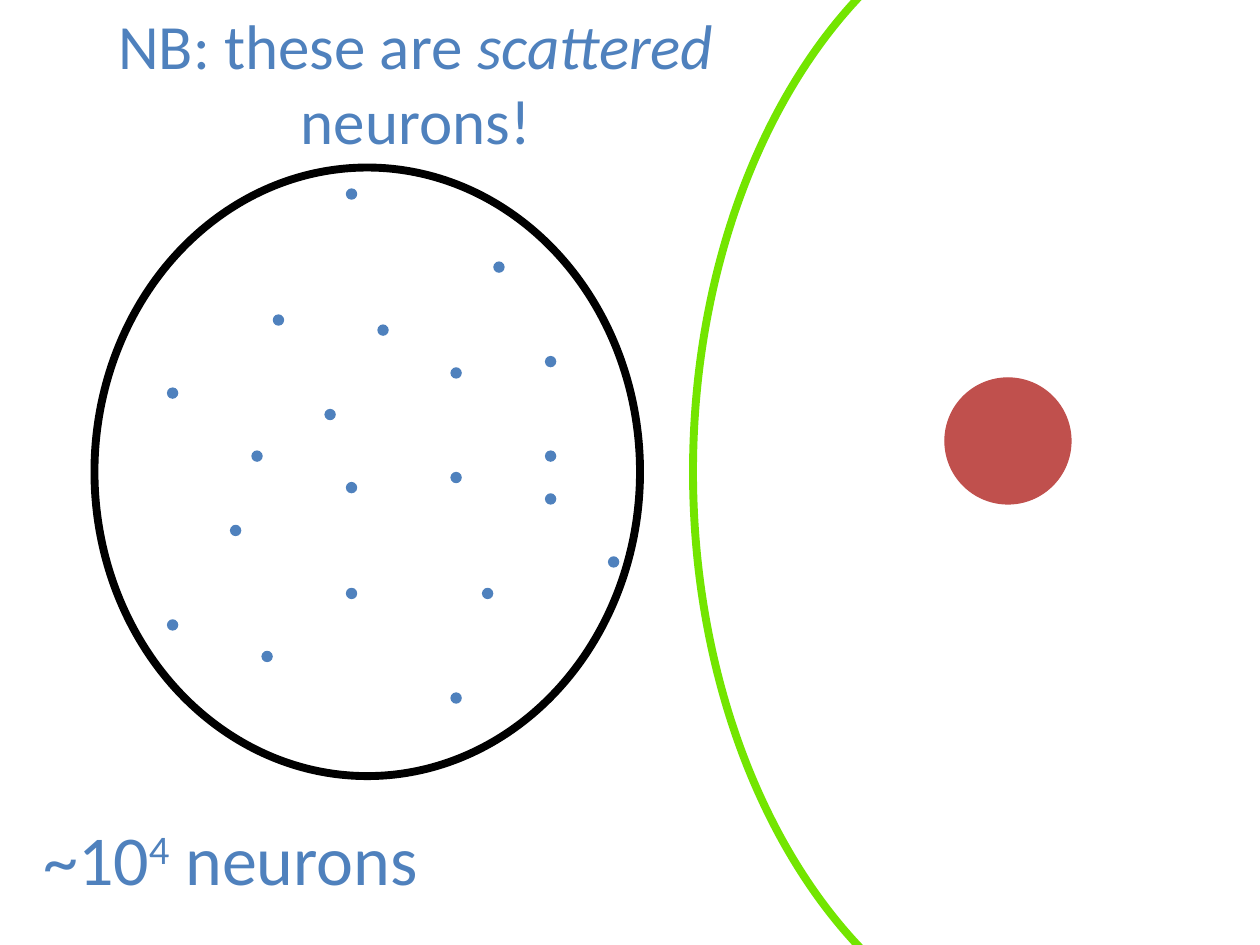
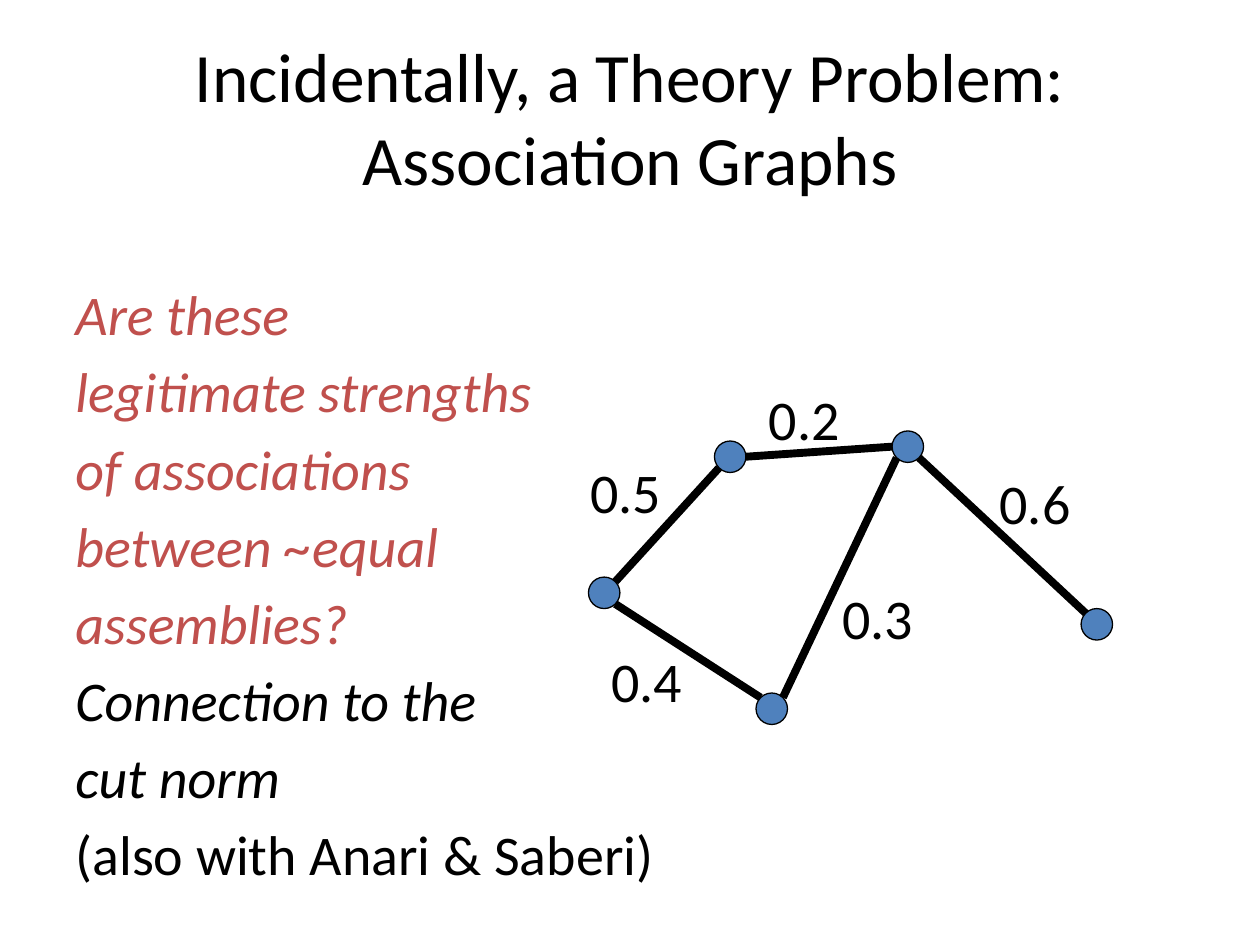
from math import cos, radians, sin

from lxml.etree import SubElement
from pptx import Presentation
from pptx.dml.color import RGBColor
from pptx.enum.shapes import MSO_CONNECTOR as Connector, MSO_SHAPE as Shape
from pptx.enum.text import MSO_ANCHOR as Anchor, MSO_AUTO_SIZE as AutoSize, PP_ALIGN as Align
from pptx.oxml.ns import qn
from pptx.util import Inches, Pt

BLACK, BLUE, RED, GREEN = "000000", "4F81BD", "C0504D", "73E500"
FONT = "Calibri"
THICK, THIN = 4.5, 0.75
DOT, NODE = 0.08, 0.25


def color(hex_string):
    """Turn a hex string into a colour."""
    return RGBColor.from_string(hex_string)


class Deck:
    """Hold the style, the presentation and the current slide."""

    def __init__(self):
        """Start an empty 10 by 7.5 inch presentation."""
        self.prs = Presentation()
        self.prs.slide_width, self.prs.slide_height = Inches(10), Inches(7.5)

    def new_slide(self):
        """Add a blank slide and make it current."""
        self.slide = self.prs.slides.add_slide(self.prs.slide_layouts[6])

    def ellipse(self, left, top, width, height, line, fill=None, weight=THIN):
        """Draw an ellipse, hollow unless a fill is given."""
        oval = self.slide.shapes.add_shape(
            Shape.OVAL, Inches(left), Inches(top), Inches(width), Inches(height))
        oval.shadow.inherit = False
        oval.line.color.rgb = color(line)
        oval.line.width = Pt(weight)
        if fill:
            oval.fill.solid()
            oval.fill.fore_color.rgb = color(fill)
        else:
            oval.fill.background()

    def edge(self, start, end):
        """Draw a thick straight line between two points."""
        line = self.slide.shapes.add_connector(
            Connector.STRAIGHT, *(Inches(value) for value in (*start, *end)))
        line.line.color.rgb = color(BLACK)
        line.line.width = Pt(THICK)
        SubElement(line._element.spPr, qn("a:effectLst"))

    def text_box(self, left, top, width, height, wrap=False):
        """Add an empty text frame that grows with its text unless it wraps."""
        frame = self.slide.shapes.add_textbox(
            Inches(left), Inches(top), Inches(width), Inches(height)).text_frame
        frame.word_wrap = wrap
        frame.auto_size = AutoSize.NONE if wrap else AutoSize.SHAPE_TO_FIT_TEXT
        return frame

    def paragraph(self, frame, text, size, ink=BLACK, align=Align.CENTER, italic=False):
        """Write text as the next paragraph of a frame."""
        last = frame.paragraphs[-1]
        para = frame.add_paragraph() if last.runs else last
        para.text = text
        para.alignment = align
        para.font.name, para.font.size = FONT, Pt(size)
        para.font.color.rgb = color(ink)
        para.font.italic = italic
        for run in para.runs:
            self.style_run(run, size, ink, italic)
        return para

    def style_run(self, run, size, ink, italic=False):
        """Give a run the deck font."""
        run.font.name, run.font.size = FONT, Pt(size)
        run.font.color.rgb = color(ink)
        run.font.italic = italic

    def add_run(self, para, text, size, ink, italic=False, baseline=0):
        """Append a run, raised by a baseline percentage if given."""
        run = para.add_run()
        run.text = text
        self.style_run(run, size, ink, italic)
        if baseline:
            run._r.get_or_add_rPr().set("baseline", str(baseline * 1000))


NEURONS = [
    (3, 2.58), (3.92, 2.08), (2.58, 3.25), (2.75, 4.67), (2.17, 2.5),
    (1.83, 4.17), (3.58, 5.5), (2.08, 5.17), (3.83, 4.67), (3.58, 2.92),
    (4.33, 3.58), (4.83, 4.42), (2.75, 3.83), (2.75, 1.5), (3.58, 3.75),
    (1.33, 3.08), (4.33, 2.83), (2, 3.58), (1.33, 4.92), (4.33, 3.92)]

ASSEMBLIES = {"top": (5.67, 3.5), "left": (4.67, 4.58), "right": (8.58, 4.83),
              "bottom": (6, 5.5), "hub": (7.08, 3.42)}
ANGLES = {"E": 0, "SE": 45, "SW": 135, "W": 180, "NW": 225, "NE": 315}
ASSOCIATIONS = [
    ("left", "NE", "top", "SW", "0.5", (4.58, 3.58)),
    ("top", "E", "hub", "W", "0.2", (6, 3)),
    ("hub", "SE", "right", "NW", "0.6", (7.83, 3.67)),
    ("left", "SE", "bottom", "NW", "0.4", (4.75, 5.08)),
    ("hub", "SW", "bottom", "NE", "0.3", (6.58, 4.58))]

QUESTION = ["Are these", "legitimate strengths", "of associations",
            "between ~equal", "assemblies?"]
CONNECTION = ["Connection to the", "cut norm"]
CREDIT = "(also with Anari & Saberi)"


def rim(assembly, side):
    """Find the point on the rim of an assembly's node."""
    left, top = ASSEMBLIES[assembly]
    angle, radius = radians(ANGLES[side]), NODE / 2
    return left + radius * (1 + cos(angle)), top + radius * (1 + sin(angle))


def scattered_neurons(deck):
    """Build the slide with neurons scattered in an area."""
    deck.new_slide()
    deck.ellipse(0.75, 1.33, 4.33, 4.83, BLACK, weight=THICK)
    deck.ellipse(5.5, -0.92, 6.42, 9.33, GREEN, weight=THICK)
    for left, top in NEURONS:
        deck.ellipse(left, top, DOT, DOT, BLUE, BLUE)

    remark = deck.text_box(0.76, 0, 5.08, 1.31)
    first = deck.paragraph(remark, "NB: these are ", 36, BLUE)
    deck.add_run(first, "scattered", 36, BLUE, italic=True)
    deck.paragraph(remark, "neurons!", 36, BLUE)

    count = deck.paragraph(deck.text_box(0.21, 6.42, 3.24, 0.77), "~10", 40, BLUE)
    deck.add_run(count, "4", 40, BLUE, baseline=30)
    deck.add_run(count, " neurons", 40, BLUE)
    deck.ellipse(7.5, 3, 1, 1, RED, RED)


def association_graph(deck):
    """Build the slide with the weighted association graph."""
    deck.new_slide()
    title = deck.text_box(0.5, 0.3, 9, 1.25, wrap=True)
    title.vertical_anchor = Anchor.MIDDLE
    deck.paragraph(title, "Incidentally, a Theory Problem:\vAssociation Graphs", 39.6)

    body = deck.text_box(0.5, 2.17, 4.92, 4.92, wrap=True)
    lines = [(text, RED, True) for text in QUESTION]
    lines += [(text, BLACK, True) for text in CONNECTION]
    lines.append((CREDIT, BLACK, False))
    for text, ink, italic in lines:
        para = deck.paragraph(body, text, 32, ink, Align.LEFT, italic)
        para.space_before = Pt(5.7)

    for left, top in ASSEMBLIES.values():
        deck.ellipse(left, top, NODE, NODE, BLACK, BLUE)
    for start, start_side, end, end_side, strength, place in ASSOCIATIONS:
        deck.edge(rim(start, start_side), rim(end, end_side))
        deck.paragraph(deck.text_box(*place, 0.77, 0.64), strength, 32)


def main():
    """Build both slides and save them."""
    deck = Deck()
    scattered_neurons(deck)
    association_graph(deck)
    deck.prs.save("out.pptx")


if __name__ == "__main__":
    main()
